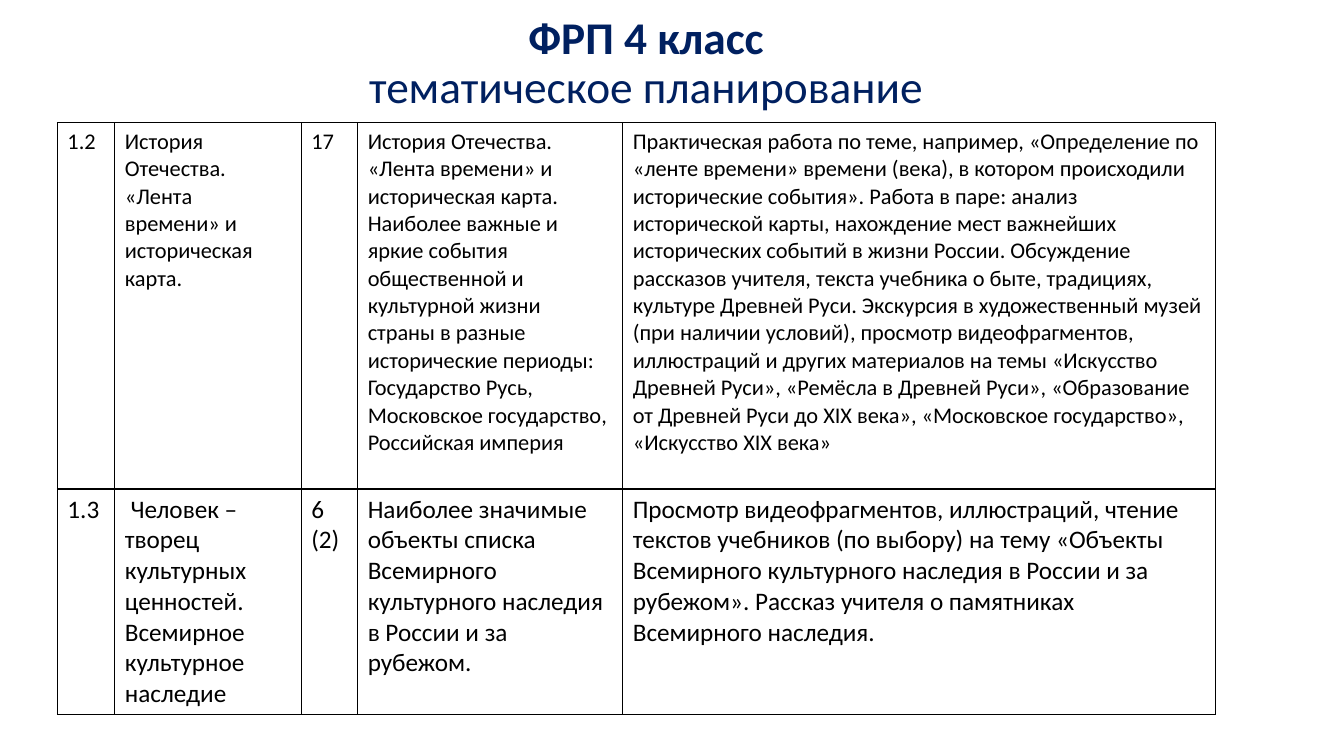
from lxml import etree
from pptx import Presentation
from pptx.dml.color import RGBColor
from pptx.enum.text import MSO_ANCHOR, PP_ALIGN
from pptx.oxml.ns import qn
from pptx.util import Pt

CENTER = PP_ALIGN.CENTER
LEFT = PP_ALIGN.LEFT
MIDDLE = MSO_ANCHOR.MIDDLE
TOP = MSO_ANCHOR.TOP

TITLE_RUNS = [("ФРП 4 класс", True), ("тематическое планирование", False)]
COLUMN_WIDTHS = [41.04, 133.2, 40.32, 189.36, 423.36]
ROW_HEIGHTS = [261.5, 161]
ROW_FONT_SIZES = [16, 18]
TOPICS = [
    [
        ["1.2"],
        ["История Отечества. «Лента времени» и историческая карта."],
        ["17"],
        [
            "История Отечества. «Лента времени» и историческая карта.",
            "Наиболее важные и яркие события общественной и культурной жизни "
            "страны в разные исторические периоды: Государство Русь, "
            "Московское государство, Российская империя",
        ],
        [
            "Практическая работа по теме, например, «Определение по «ленте "
            "времени» времени (века), в котором происходили исторические "
            "события». Работа в паре: анализ исторической карты, нахождение "
            "мест важнейших исторических событий в жизни России. Обсуждение "
            "рассказов учителя, текста учебника о быте, традициях, культуре "
            "Древней Руси. Экскурсия в художественный музей (при наличии "
            "условий), просмотр видеофрагментов, иллюстраций и других "
            "материалов на темы «Искусство Древней Руси», «Ремёсла в Древней "
            "Руси», «Образование от Древней Руси до XIX века», «Московское "
            "государство», «Искусство ХIХ века»",
        ],
    ],
    [
        ["1.3"],
        [" Человек – творец культурных ценностей. Всемирное культурное наследие"],
        ["6 (2)"],
        [
            "Наиболее значимые объекты списка Всемирного культурного наследия "
            "в России и за рубежом.",
        ],
        [
            "Просмотр видеофрагментов, иллюстраций, чтение текстов учебников "
            "(по выбору) на тему «Объекты Всемирного культурного наследия в "
            "России и за рубежом». Рассказ учителя о памятниках",
            "Всемирного наследия.",
        ],
    ],
]


def color(value):
    return RGBColor.from_string(value)


class PlanSlide:
    font_name = "Calibri"
    title_color = "002060"
    text_color = "000000"
    border_color = "000000"
    border_width = 1

    def __init__(self, presentation):
        self.slide = presentation.slides.add_slide(presentation.slide_layouts[6])

    def add_run(self, paragraph, text, size, text_color, bold=False):
        run = paragraph.add_run()
        run.text = text
        run.font.name = self.font_name
        run.font.size = Pt(size)
        run.font.bold = bold
        run.font.color.rgb = color(text_color)

    def add_title(self, runs, left, top, width, height, size):
        box = self.slide.shapes.add_textbox(Pt(left), Pt(top), Pt(width), Pt(height))
        frame = box.text_frame
        frame.word_wrap = True
        frame.vertical_anchor = MIDDLE
        paragraph = frame.paragraphs[0]
        paragraph.alignment = CENTER
        paragraph.line_spacing = 0.9
        for index, (text, bold) in enumerate(runs):
            if index:
                paragraph.add_line_break()
            self.add_run(paragraph, text, size, self.title_color, bold)

    def add_borders(self, cell):
        properties = cell._tc.get_or_add_tcPr()
        for side in ("a:lnL", "a:lnR", "a:lnT", "a:lnB"):
            line = etree.SubElement(properties, qn(side), w=str(Pt(self.border_width)))
            fill = etree.SubElement(line, qn("a:solidFill"))
            etree.SubElement(fill, qn("a:srgbClr"), val=self.border_color)

    def fill_cell(self, cell, texts, size):
        self.add_borders(cell)
        cell.fill.background()
        cell.vertical_anchor = TOP
        frame = cell.text_frame
        for index, text in enumerate(texts):
            paragraph = frame.add_paragraph() if index else frame.paragraphs[0]
            paragraph.alignment = LEFT
            self.add_run(paragraph, text, size, self.text_color)

    def add_table(self, rows, left, top, widths, heights, sizes):
        frame = self.slide.shapes.add_table(
            len(rows), len(widths), Pt(left), Pt(top), Pt(sum(widths)), Pt(sum(heights))
        )
        table = frame.table
        table.first_row = False
        table.horz_banding = False
        for column, width in zip(table.columns, widths):
            column.width = Pt(width)
        for table_row, height, row, size in zip(table.rows, heights, rows, sizes):
            table_row.height = Pt(height)
            for cell, texts in zip(table_row.cells, row):
                self.fill_cell(cell, texts, size)


def main():
    presentation = Presentation()
    presentation.slide_width = Pt(960)
    presentation.slide_height = Pt(540)
    plan = PlanSlide(presentation)
    plan.add_title(TITLE_RUNS, 47.5, 9.4, 828, 72.7, 32.4)
    plan.add_table(TOPICS, 41, 87.8, COLUMN_WIDTHS, ROW_HEIGHTS, ROW_FONT_SIZES)
    presentation.save("out.pptx")


if __name__ == "__main__":
    main()
